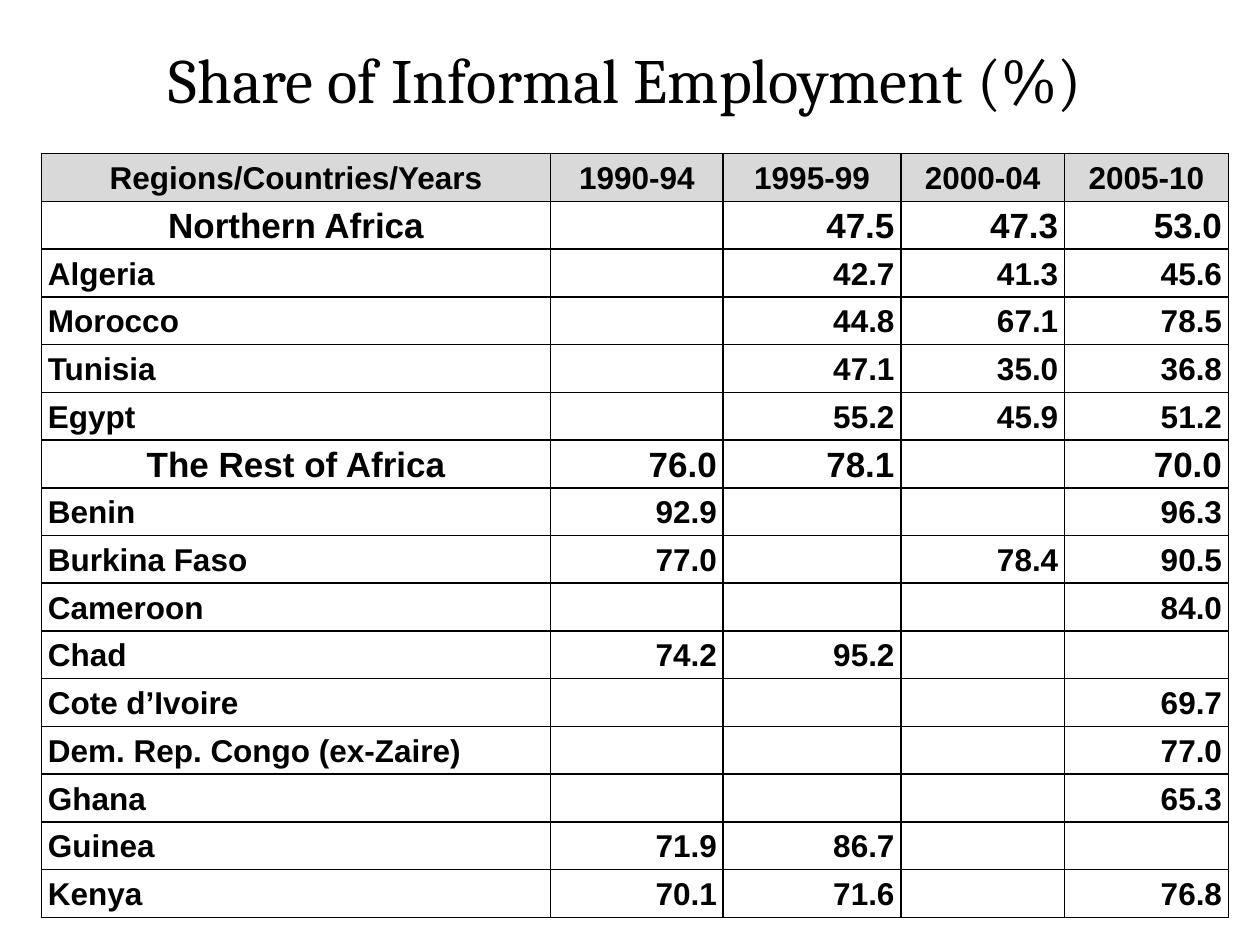
import lxml.etree
import pptx
import pptx.dml.color
import pptx.enum.text
import pptx.oxml.ns
import pptx.util

Inches = pptx.util.Inches
Align = pptx.enum.text.PP_ALIGN
Anchor = pptx.enum.text.MSO_ANCHOR

BLACK = "000000"
HEADER_GREY = "D9D9D9"
COLUMN_WIDTHS = [4.04, 1.37, 1.41, 1.3, 1.3]
HEADER = ["Regions/Countries/Years", "1990-94", "1995-99", "2000-04", "2005-10"]
REGIONS = {
    "Northern Africa": [
        ["Northern Africa", "", "47.5", "47.3", "53.0"],
        ["Algeria", "", "42.7", "41.3", "45.6"],
        ["Morocco", "", "44.8", "67.1", "78.5"],
        ["Tunisia", "", "47.1", "35.0", "36.8"],
        ["Egypt", "", "55.2", "45.9", "51.2"],
    ],
    "The Rest of Africa": [
        ["The Rest of Africa", "76.0", "78.1", "", "70.0"],
        ["Benin", "92.9", "", "", "96.3"],
        ["Burkina Faso", "77.0", "", "78.4", "90.5"],
        ["Cameroon", "", "", "", "84.0"],
        ["Chad", "74.2", "95.2", "", ""],
        ["Cote d’Ivoire", "", "", "", "69.7"],
        ["Dem. Rep. Congo (ex-Zaire)", "", "", "", "77.0"],
        ["Ghana", "", "", "", "65.3"],
        ["Guinea", "71.9", "86.7", "", ""],
        ["Kenya", "70.1", "71.6", "", "76.8"],
    ],
}


def color(value):
    """Return the colour for a hex string."""
    return pptx.dml.color.RGBColor.from_string(value)


def write_text(frame, text, size=18, font="Arial", bold=False, align=Align.LEFT,
               spacing=None, fill=BLACK):
    """Write one formatted paragraph into a text frame."""
    paragraph = frame.paragraphs[0]
    paragraph.alignment = align
    paragraph.line_spacing = spacing
    run = paragraph.add_run()
    run.text = text
    run.font.size = pptx.util.Pt(size)
    run.font.name = font
    run.font.bold = bold
    run.font.color.rgb = color(fill)


def add_borders(cell, value=BLACK, width=1):
    """Draw a solid line on all four sides of a cell."""
    properties = cell._tc.get_or_add_tcPr()
    qualified = pptx.oxml.ns.qn
    for side in ("a:lnL", "a:lnR", "a:lnT", "a:lnB"):
        line = lxml.etree.SubElement(properties, qualified(side), w=str(pptx.util.Pt(width)))
        fill = lxml.etree.SubElement(line, qualified("a:solidFill"))
        lxml.etree.SubElement(fill, qualified("a:srgbClr"), val=value)


def format_cell(cell, text, fill=None, **text_format):
    """Give a cell its borders, margins, fill and text."""
    add_borders(cell)
    cell.margin_left = cell.margin_right = Inches(0.05)
    cell.margin_top = cell.margin_bottom = 0
    cell.vertical_anchor = Anchor.MIDDLE
    if fill:
        cell.fill.solid()
        cell.fill.fore_color.rgb = color(fill)
    else:
        cell.fill.background()
    if text:
        write_text(cell.text_frame, text, bold=True, spacing=1.07, **text_format)


def place_title(slide, left, top, width, height):
    """Place and format the title placeholder."""
    title = slide.shapes.title
    title.left, title.top, title.width, title.height = left, top, width, height
    title.text_frame.vertical_anchor = Anchor.MIDDLE
    write_text(title.text_frame, "Share of Informal Employment (%)", size=36,
               font="Cambria", align=Align.CENTER)


def add_employment_table(slide, left, top, width, height):
    """Add the table of informal employment by region, country and period."""
    rows = [HEADER] + [row for region in REGIONS.values() for row in region]
    shape = slide.shapes.add_table(len(rows), len(HEADER), left, top, width, height)
    table = shape.table
    table.first_row = table.horz_banding = False
    for column, share in zip(table.columns, COLUMN_WIDTHS):
        column.width = int(width * share / sum(COLUMN_WIDTHS))
    for row_index, row in enumerate(rows):
        is_header, is_region = row_index == 0, row[0] in REGIONS
        for column_index, text in enumerate(row):
            if is_header or (is_region and column_index == 0):
                align = Align.CENTER
            else:
                align = Align.RIGHT if column_index else Align.LEFT
            format_cell(table.cell(row_index, column_index), text,
                        fill=HEADER_GREY if is_header else None,
                        size=20 if is_region else 18, align=align)


def main():
    """Build the slide and save it."""
    presentation = pptx.Presentation()
    presentation.slide_width, presentation.slide_height = Inches(10), Inches(7.5)
    slide = presentation.slides.add_slide(presentation.slide_layouts[5])
    place_title(slide, Inches(0.17), Inches(0.21), Inches(9.58), Inches(0.82))
    add_employment_table(slide, Inches(0.33), Inches(1.22), Inches(9.42), Inches(6.06))
    presentation.save("out.pptx")


if __name__ == "__main__":
    main()
